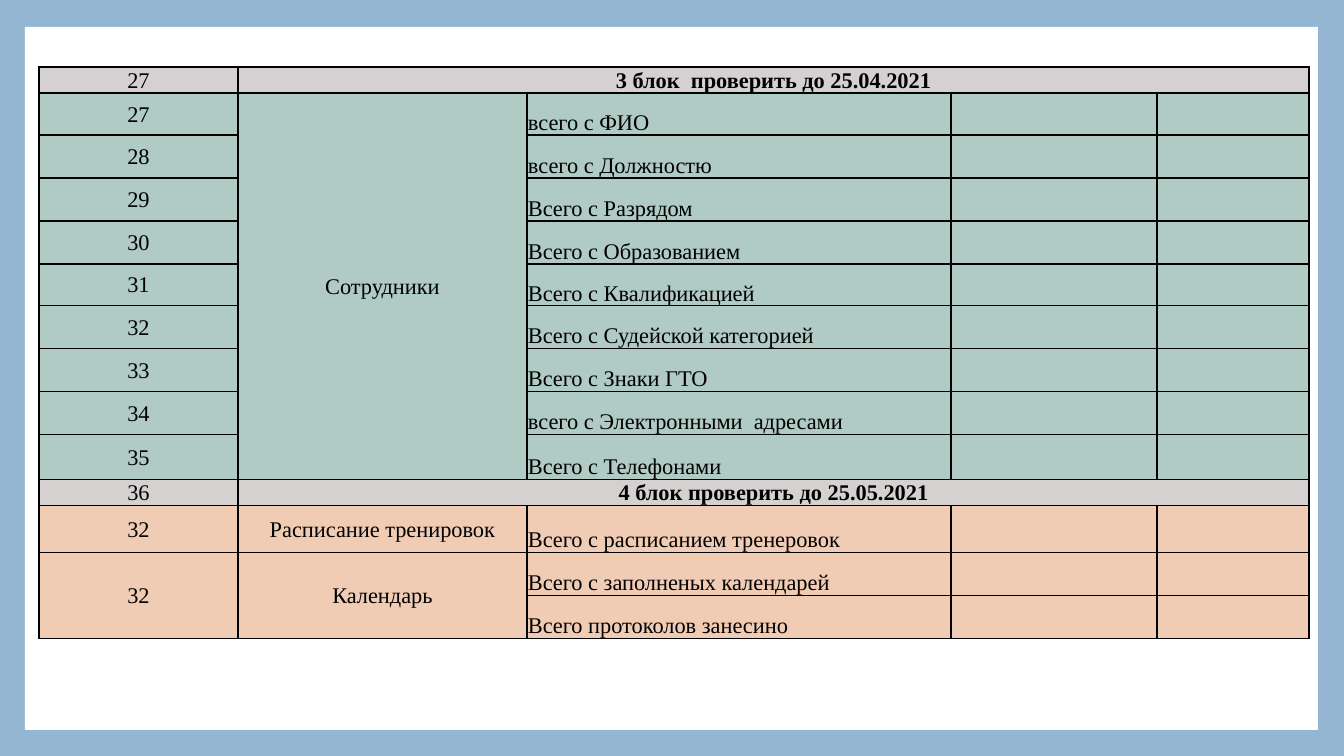
import pptx
import pptx.util
import pptx.dml.color
import pptx.enum.shapes
import pptx.enum.text
import pptx.oxml
import pptx.oxml.ns

# Content: (number, heading, fill, groups); group: (section, row numbers, items)
BLOCKS = [
    ("27", "3 блок  проверить до 25.04.2021", "B0CAC4", [
        ("Сотрудники",
         ["27", "28", "29", "30", "31", "32", "33", "34", "35"],
         ["всего с ФИО", "всего с Должностю", "Всего с Разрядом",
          "Всего с Образованием", "Всего с Квалификацией",
          "Всего с Судейской категорией", "Всего с Знаки ГТО",
          "всего с Электронными  адресами", "Всего с Телефонами"]),
    ]),
    ("36", "4 блок проверить до 25.05.2021", "F1CCB5", [
        ("Расписание тренировок", ["32"], ["Всего с расписанием тренеровок"]),
        ("Календарь", ["32"],
         ["Всего с заполненых календарей", "Всего протоколов занесино"]),
    ]),
]
HEADING_FILL, BACKGROUND, PANEL, INK = "D5D1D1", "94B6D2", "FFFFFF", "000000"
COLUMN_EDGES = [39, 238, 527, 951, 1157, 1309]
ROW_EDGES = [67, 93, 135, 178, 221, 264, 306, 349, 392, 435, 480, 506, 553, 596, 639]
CELL_FORMAT = {"margin_left": 1, "margin_top": 1, "margin_right": 1, "margin_bottom": 0}
FONT_FORMAT = {"name": "Times New Roman", "size": pptx.util.Pt(16)}
MIDDLE = pptx.enum.text.MSO_ANCHOR.MIDDLE
BOTTOM = pptx.enum.text.MSO_ANCHOR.BOTTOM
CENTER = pptx.enum.text.PP_ALIGN.CENTER
LEFT = pptx.enum.text.PP_ALIGN.LEFT


def px(length):
    return round(length * 914400 / 100.8)


def paint(fill, color):
    fill.solid()
    fill.fore_color.rgb = pptx.dml.color.RGBColor.from_string(color)


def write(cell, text, anchor=MIDDLE, align=CENTER, bold=False):
    cell.vertical_anchor = anchor
    paragraph = cell.text_frame.paragraphs[0]
    paragraph.alignment = align
    run = paragraph.add_run()
    run.text = text
    for key, value in FONT_FORMAT.items():
        setattr(run.font, key, value)
    run.font.bold = bold
    paint(run.font.fill, INK)


def dress(cell, color):
    for key, value in CELL_FORMAT.items():
        setattr(cell, key, px(value))
    properties = cell._tc.get_or_add_tcPr()
    for side in ("lnL", "lnR", "lnT", "lnB"):
        properties.append(pptx.oxml.parse_xml(
            f'<a:{side} {pptx.oxml.ns.nsdecls("a")} w="12700"><a:solidFill>'
            f'<a:srgbClr val="{INK}"/></a:solidFill></a:{side}>'))
    paint(cell.fill, color)


def merge(grid, top, left, bottom, right):
    if (top, left) != (bottom, right):
        grid.cell(top, left).merge(grid.cell(bottom, right))


def fill_checklist(grid):
    row = 0
    last_column = len(COLUMN_EDGES) - 2
    for number, heading, color, groups in BLOCKS:
        # Block heading
        for column in range(last_column + 1):
            dress(grid.cell(row, column), HEADING_FILL)
        write(grid.cell(row, 0), number)
        write(grid.cell(row, 1), heading, bold=True)
        merge(grid, row, 1, row, last_column)
        row += 1

        # Sections: each number covers an equal share of the items
        for section, numbers, items in groups:
            share = len(items) // len(numbers)
            for offset, item in enumerate(items):
                for column in range(last_column + 1):
                    dress(grid.cell(row + offset, column), color)
                write(grid.cell(row + offset, 2), item, BOTTOM, LEFT)
            for index, label in enumerate(numbers):
                top = row + index * share
                write(grid.cell(top, 0), label)
                merge(grid, top, 0, top + share - 1, 0)
            write(grid.cell(row, 1), section)
            merge(grid, row, 1, row + len(items) - 1, 1)
            row += len(items)


def main():
    deck = pptx.Presentation()
    deck.slide_width, deck.slide_height = px(1344), px(756)
    slide = deck.slides.add_slide(deck.slide_layouts[6])

    # Frame: coloured background with a white panel
    paint(slide.background.fill, BACKGROUND)
    panel = slide.shapes.add_shape(
        pptx.enum.shapes.MSO_SHAPE.RECTANGLE, px(25), px(27), px(1293), px(703))
    paint(panel.fill, PANEL)
    panel.line.fill.background()
    panel.shadow.inherit = False

    # Checklist table
    left, top = COLUMN_EDGES[0], ROW_EDGES[0]
    grid = slide.shapes.add_table(
        len(ROW_EDGES) - 1, len(COLUMN_EDGES) - 1, px(left), px(top),
        px(COLUMN_EDGES[-1] - left), px(ROW_EDGES[-1] - top)).table
    grid.first_row = grid.horz_banding = False
    for column, start, end in zip(grid.columns, COLUMN_EDGES, COLUMN_EDGES[1:]):
        column.width = px(end - start)
    for row, start, end in zip(grid.rows, ROW_EDGES, ROW_EDGES[1:]):
        row.height = px(end - start)
    fill_checklist(grid)

    deck.save("out.pptx")


if __name__ == "__main__":
    main()
